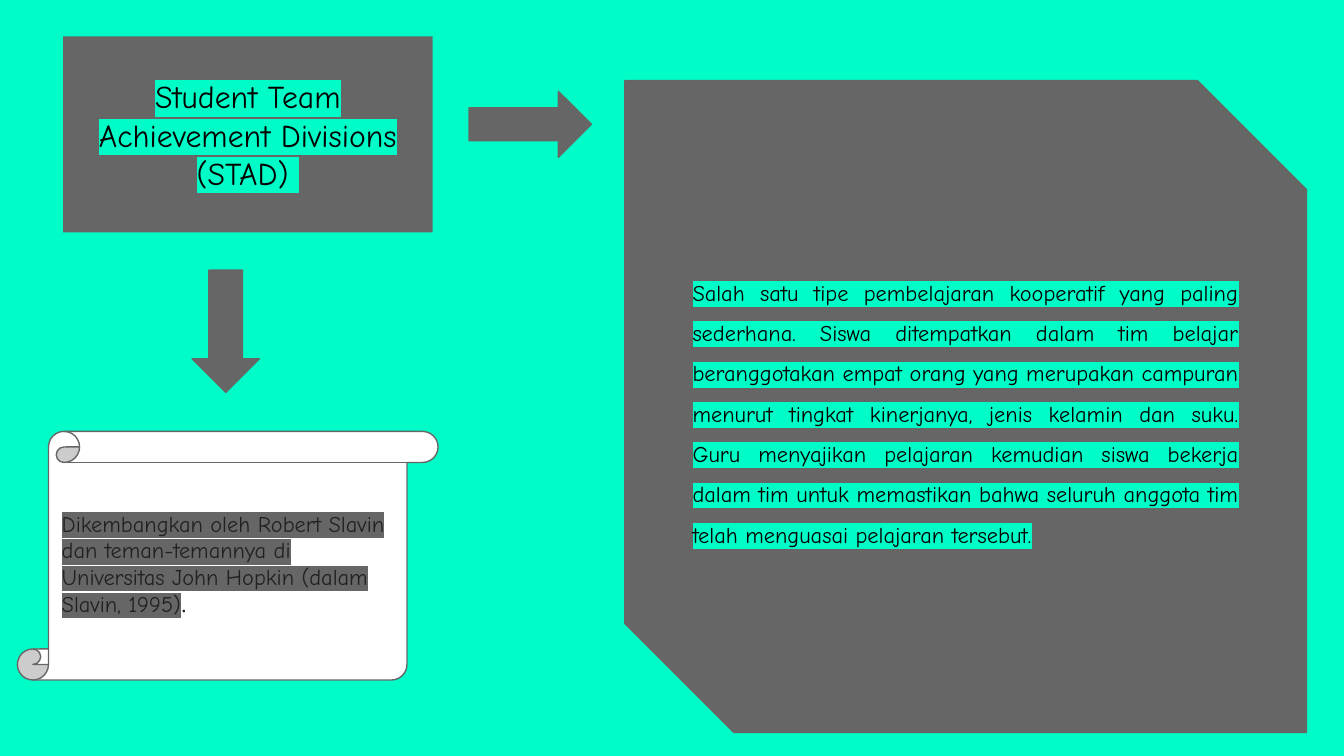
from lxml.etree import SubElement
from pptx import Presentation
from pptx.dml.color import RGBColor
from pptx.enum.shapes import MSO_SHAPE
from pptx.enum.text import MSO_ANCHOR, MSO_AUTO_SIZE, PP_ALIGN
from pptx.oxml.ns import qn
from pptx.util import Inches, Pt

MINT = "00FDC8"
GRAY = "666666"
WHITE = "FFFFFF"
BLACK = "000000"
INK = "212121"


def color(value):
    return RGBColor.from_string(value)


class SlideBuilder:
    font = "Comic Neue"
    inset = Inches(0.1)
    line_width = Pt(0.75)

    def __init__(self, slide, background):
        self.s = slide
        self.fill(slide.background, background)

    def fill(self, target, value):
        target.fill.solid()
        target.fill.fore_color.rgb = color(value)

    def title(self, box, text, size):
        sp = self.s.shapes.title
        sp.left, sp.top, sp.width, sp.height = map(Inches, box)
        self.fill(sp, GRAY)
        self.text(sp, text, size, BLACK, MINT, PP_ALIGN.CENTER)

    def shape(self, kind, box, fill=GRAY, adjustments=()):
        sp = self.s.shapes.add_shape(kind, *map(Inches, box))
        sp.shadow.inherit = False
        self.fill(sp, fill)
        sp.line.color.rgb = color(GRAY)
        sp.line.width = self.line_width
        for i, value in enumerate(adjustments):
            sp.adjustments[i] = value
        return sp

    def text(self, sp, text, size, ink, highlight, align=PP_ALIGN.LEFT):
        tf = sp.text_frame
        tf.text = text
        tf.word_wrap = True
        tf.auto_size = MSO_AUTO_SIZE.NONE
        tf.vertical_anchor = MSO_ANCHOR.MIDDLE
        tf.margin_left = tf.margin_right = self.inset
        tf.margin_top = tf.margin_bottom = self.inset
        p = tf.paragraphs[0]
        p.alignment = align
        self.style(p.runs[0], size, ink, self.font)
        self.highlight(p.runs[0], highlight)
        return p

    def style(self, r, size, ink, font):
        r.font.size = Pt(size)
        r.font.name = font
        r.font.color.rgb = color(ink)

    def highlight(self, r, value):
        props = r.font._element
        mark = SubElement(props, qn("a:highlight"))
        SubElement(mark, qn("a:srgbClr"), val=value)
        props.find(qn("a:solidFill")).addnext(mark)


def main():
    prs = Presentation()
    prs.slide_width = Inches(10)
    prs.slide_height = prs.slide_width * 9 // 16
    b = SlideBuilder(prs.slides.add_slide(prs.slide_layouts[5]), MINT)

    b.title((0.47, 0.27, 2.75, 1.46), "Student Team Achievement Divisions (STAD) ", 17)
    b.shape(MSO_SHAPE.DOWN_ARROW, (1.43, 2.01, 0.5, 0.91))
    b.shape(MSO_SHAPE.RIGHT_ARROW, (3.49, 0.68, 0.91, 0.49))

    description = b.shape(
        MSO_SHAPE.SNIP_2_DIAG_RECTANGLE, (4.65, 0.6, 5.07, 4.85), adjustments=(0, 0.167)
    )
    p = b.text(
        description,
        "Salah satu tipe pembelajaran kooperatif yang paling sederhana. "
        "Siswa ditempatkan dalam tim belajar beranggotakan empat orang yang "
        "merupakan campuran menurut tingkat kinerjanya, jenis kelamin dan suku. "
        "Guru menyajikan pelajaran kemudian siswa bekerja dalam tim untuk "
        "memastikan bahwa seluruh anggota tim telah menguasai pelajaran tersebut.",
        12, BLACK, MINT, PP_ALIGN.JUSTIFY,
    )
    p.line_spacing = 1.5
    p.space_before = Pt(12)

    scroll = b.shape(MSO_SHAPE.VERTICAL_SCROLL, (0.13, 3.21, 3.13, 1.85), WHITE)
    p = b.text(
        scroll,
        "Dikembangkan oleh Robert Slavin dan teman-temannya di "
        "Universitas John Hopkin (dalam Slavin, 1995)",
        12, INK, GRAY,
    )
    r = p.add_run()
    r.text = "."
    b.style(r, 12, INK, "Times New Roman")

    prs.save("out.pptx")


if __name__ == "__main__":
    main()
